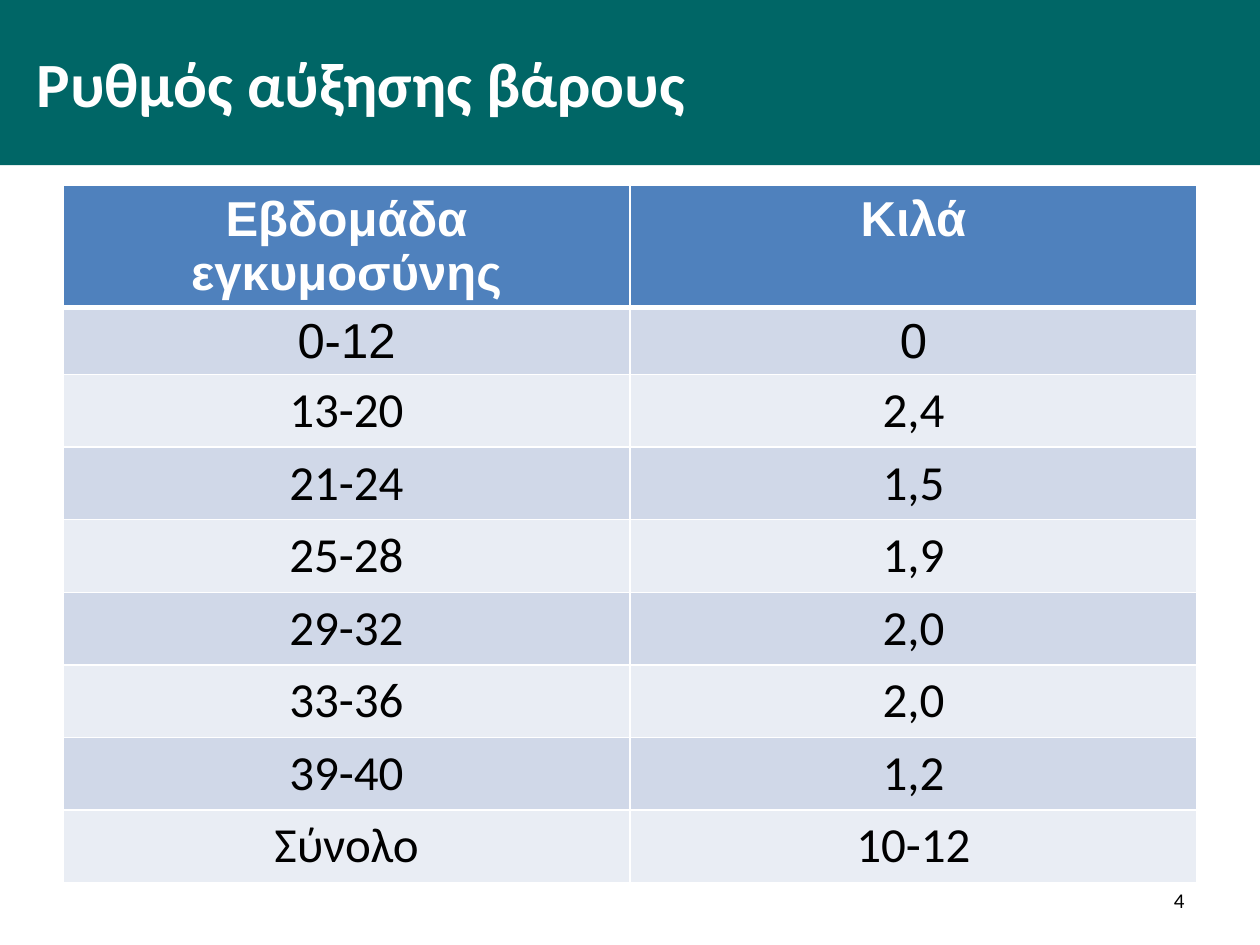
from dataclasses import dataclass

from lxml import etree
from pptx import Presentation
from pptx import util as u
from pptx.dml.color import RGBColor
from pptx.enum import shapes, text
from pptx.oxml import ns


@dataclass(frozen=True)
class Style:
    size: int
    color: str
    font: str = "Calibri"
    bold: bool = False
    align: text.PP_ALIGN = text.PP_ALIGN.CENTER


@dataclass(frozen=True)
class Row:
    week: str
    kilos: str
    fill: str
    style: Style


TITLE = Style(36, "FFFFFF", bold=True, align=text.PP_ALIGN.LEFT)
HEADER = Style(28, "FFFFFF", "Arial", True)
FIRST = Style(28, "000000", "Arial")
BODY = Style(28, "000000")
NUMBER = Style(12, "000000", align=text.PP_ALIGN.RIGHT)
BANDS = ("D0D8E8", "E9EDF4")
GAINS = (
    ("0-12", "0"),
    ("13-20", "2,4"),
    ("21-24", "1,5"),
    ("25-28", "1,9"),
    ("29-32", "2,0"),
    ("33-36", "2,0"),
    ("39-40", "1,2"),
    ("Σύνολο", "10-12"),
)


def set_fill(obj, color: str) -> None:
    obj.fill.solid()
    obj.fill.fore_color.rgb = RGBColor.from_string(color)


def set_text(tf, value: str, style: Style) -> None:
    tf.word_wrap = True
    tf.text = value
    p = tf.paragraphs[0]
    p.alignment = style.align
    font = p.runs[0].font
    font.size = u.Pt(style.size)
    font.name = style.font
    font.bold = style.bold
    font.color.rgb = RGBColor.from_string(style.color)


def set_borders(cell, top: int, bottom: int) -> None:
    tc_pr = cell._tc.get_or_add_tcPr()
    widths = {"lnL": 1, "lnR": 1, "lnT": top, "lnB": bottom}
    for i, (tag, width) in enumerate(widths.items()):
        ln = etree.Element(ns.qn(f"a:{tag}"), w=str(u.Pt(width)))
        fill = etree.SubElement(ln, ns.qn("a:solidFill"))
        etree.SubElement(fill, ns.qn("a:srgbClr"), val="FFFFFF")
        tc_pr.insert(i, ln)


def add_title(s, value: str) -> None:
    sp = s.shapes.add_shape(
        shapes.MSO_SHAPE.RECTANGLE, 0, 0, u.Cm(25.4), u.Cm(3.33)
    )
    sp.shadow.inherit = False
    set_fill(sp, "006666")
    sp.line.fill.background()
    tf = sp.text_frame
    tf.margin_left = u.Cm(0.74)
    tf.vertical_anchor = text.MSO_ANCHOR.MIDDLE
    set_text(tf, value, TITLE)


def add_gain_table(s, rows: list[Row]) -> None:
    row_height = u.Cm(1.03)
    table = s.shapes.add_table(
        len(rows), 2, u.Cm(1.27), u.Cm(3.74), u.Cm(22.86), row_height * len(rows)
    ).table
    for i, row in enumerate(rows):
        for j, value in enumerate((row.week, row.kilos)):
            cell = table.cell(i, j)
            set_fill(cell, row.fill)
            set_text(cell.text_frame, value, row.style)
            set_borders(cell, 3 if i == 1 else 1, 3 if i == 0 else 1)


def add_slide_number(s, value: str) -> None:
    sp = s.shapes.add_textbox(u.Cm(18.2), u.Cm(17.65), u.Cm(5.93), u.Cm(1.01))
    sp.text_frame.vertical_anchor = text.MSO_ANCHOR.MIDDLE
    set_text(sp.text_frame, value, NUMBER)


def main() -> None:
    prs = Presentation()
    prs.slide_width, prs.slide_height = u.Cm(25.4), u.Cm(19.05)
    s = prs.slides.add_slide(prs.slide_layouts[6])
    rows = [Row("Εβδομάδα εγκυμοσύνης", "Κιλά", "4F81BD", HEADER)]
    for i, (week, kilos) in enumerate(GAINS):
        rows.append(Row(week, kilos, BANDS[i % 2], BODY if i else FIRST))
    add_title(s, "Ρυθμός αύξησης βάρους")
    add_gain_table(s, rows)
    add_slide_number(s, "4")
    prs.save("out.pptx")


if __name__ == "__main__":
    main()
